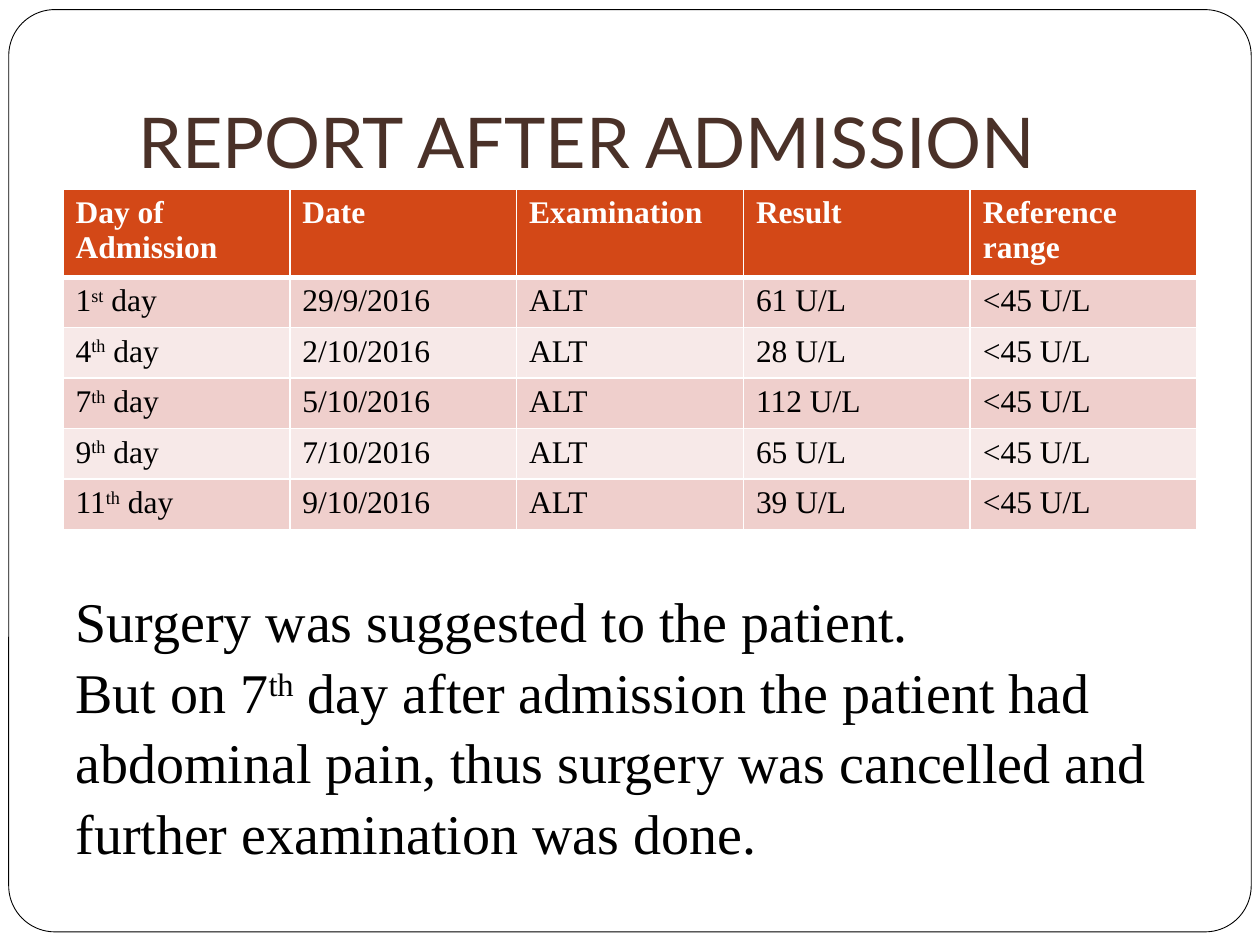
import pptx
import pptx.util
import pptx.dml.color
import pptx.enum.shapes
import pptx.enum.text
import pptx.oxml.ns
from lxml import etree

Pt = pptx.util.Pt
SERIF = "Times New Roman"

# Content: "^" marks off a superscript
TITLE = "REPORT AFTER ADMISSION"
HEAD = ["Day of Admission", "Date", "Examination", "Result", "Reference range"]
TESTS = [
    ("1^st^ day", "29/9/2016", "61 U/L"),
    ("4^th^ day", "2/10/2016", "28 U/L"),
    ("7^th^ day", "5/10/2016", "112 U/L"),
    ("9^th^ day", "7/10/2016", "65 U/L"),
    ("11^th^ day", "9/10/2016", "39 U/L"),
]
ROWS = [HEAD] + [(day, date, "ALT", val, "<45 U/L") for day, date, val in TESTS]
NOTES = [
    "Surgery was suggested to the patient.",
    "But on 7^th^ day after admission the patient had abdominal pain, "
    "thus surgery was cancelled and further examination was done.",
]


def color(text):
    return pptx.dml.color.RGBColor.from_string(text)


def write(para, text, size, ink, face=SERIF, bold=False):
    font = para.font
    font.size, font.name, font.bold = Pt(size), face, bold
    font.color.rgb = color(ink)
    for i, part in enumerate(text.split("^")):
        run = para.add_run()
        run.text = part
        if i % 2:
            run.font._element.set("baseline", "30000")


def border(cell, side, width):
    props = cell._tc.get_or_add_tcPr()
    line = etree.SubElement(props, pptx.oxml.ns.qn("a:" + side), w=str(Pt(width)))
    fill = etree.SubElement(line, pptx.oxml.ns.qn("a:solidFill"))
    etree.SubElement(fill, pptx.oxml.ns.qn("a:srgbClr"), val="FFFFFF")


def add_box(left, top, width, height):
    frame = slide.shapes.add_textbox(Pt(left), Pt(top), Pt(width), Pt(height)).text_frame
    frame.word_wrap = True
    return frame


deck = pptx.Presentation()
deck.slide_width, deck.slide_height = Pt(720), Pt(540)
slide = deck.slides.add_slide(deck.slide_layouts[6])

# Rounded page frame
page = slide.shapes.add_shape(
    pptx.enum.shapes.MSO_SHAPE.ROUNDED_RECTANGLE, Pt(5), Pt(5.5), Pt(710), Pt(527))
page.adjustments[0] = 0.05
page.shadow.inherit = False
page.fill.solid()
page.fill.fore_color.rgb = color("FFFFFF")
page.line.color.rgb = color("000000")
page.line.width = Pt(0.5)

# Title
frame = add_box(72, 21.6, 612, 90)
frame.vertical_anchor = pptx.enum.text.MSO_ANCHOR.BOTTOM
frame.margin_bottom = Pt(7.2)
write(frame.paragraphs[0], TITLE, 40, "4A3128", "Lato")

# Results table
table = slide.shapes.add_table(
    len(ROWS), len(HEAD), Pt(36), Pt(108), Pt(648), Pt(26 * len(ROWS))).table
for r, row in enumerate(ROWS):
    top = r == 0
    shade = "D34817" if top else ("F7E9E8", "EFCFCC")[r % 2]
    for c, text in enumerate(row):
        cell = table.cell(r, c)
        write(cell.text_frame.paragraphs[0], text, 18,
              "FFFFFF" if top else "000000", bold=top)
        for side in ("lnL", "lnR", "lnT", "lnB"):
            thick = (top and side == "lnB") or (r == 1 and side == "lnT")
            border(cell, side, 3 if thick else 1)
        cell.fill.solid()
        cell.fill.fore_color.rgb = color(shade)

# Notes below the table
frame = add_box(36, 329.8, 642, 201)
for i, text in enumerate(NOTES):
    para = frame.add_paragraph() if i else frame.paragraphs[0]
    write(para, text, 32, "000000")
    para.line_spacing = 1.05

deck.save("out.pptx")
